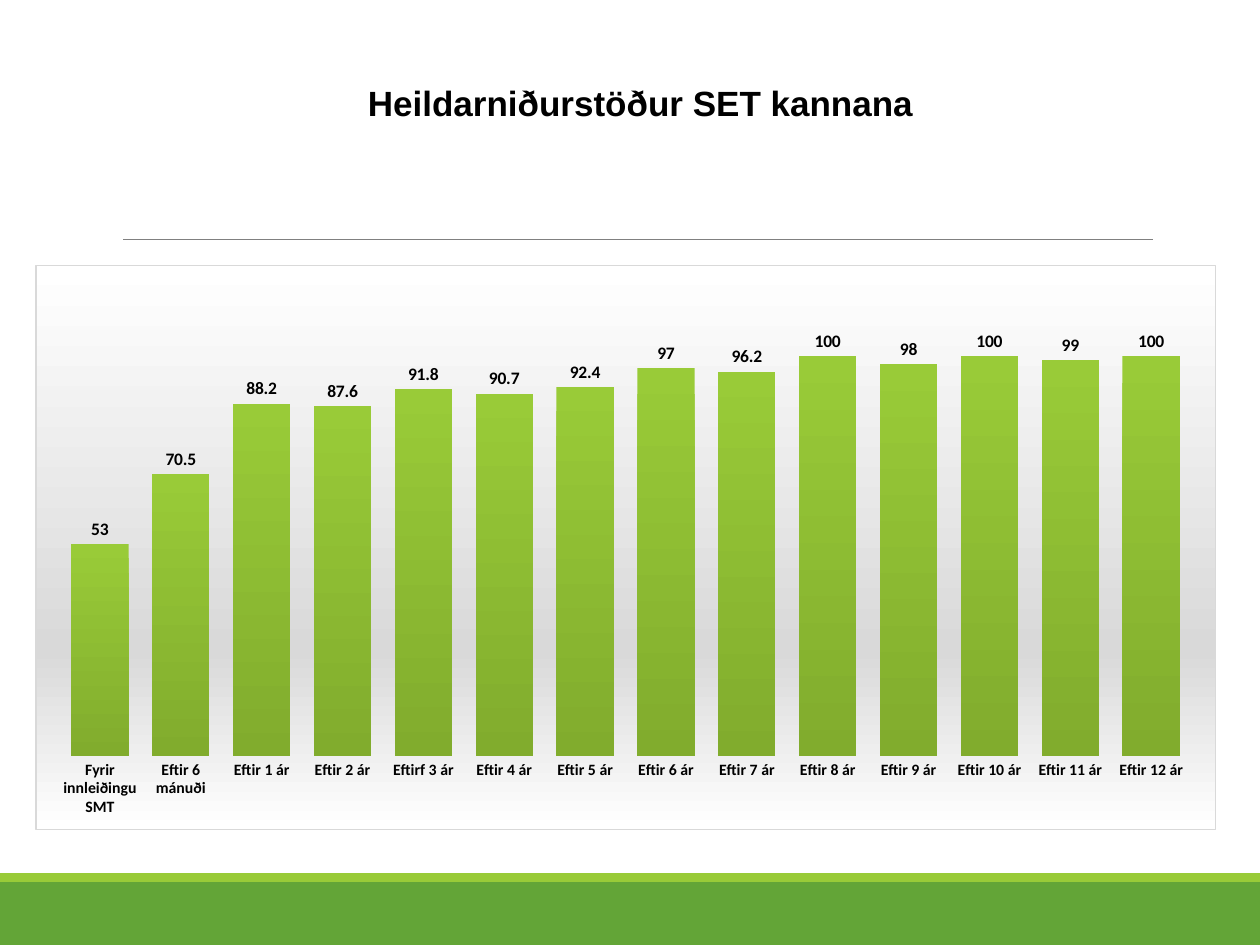
import pptx
import pptx.chart.data
import pptx.dml.color
import pptx.enum.chart
import pptx.enum.shapes
import pptx.enum.text
import pptx.oxml
import pptx.oxml.ns
import pptx.util

RGBColor = pptx.dml.color.RGBColor
BLACK = RGBColor(0x00, 0x00, 0x00)
WHITE = RGBColor(0xFF, 0xFF, 0xFF)
GRAY = RGBColor(0x80, 0x80, 0x80)
SILVER = RGBColor(0xD9, 0xD9, 0xD9)
GREEN = RGBColor(0x63, 0xA5, 0x37)
LIME = RGBColor(0x99, 0xCB, 0x38)
OLIVE = RGBColor(0x81, 0xAC, 0x2D)

WIDTH, HEIGHT = 10, 7.5
FOOTER_TOP = 7
STRIPE_HEIGHT = 0.07
NAMESPACES = pptx.oxml.ns.nsdecls("a", "c")

CATEGORIES = ["Fyrir innleiðingu SMT", "Eftir 6 mánuði", "Eftir 1 ár", "Eftir 2 ár", "Eftirf 3 ár"]
CATEGORIES += [f"Eftir {year} ár" for year in range(4, 13)]
SCORES = [53, 70.5, 88.2, 87.6, 91.8, 90.7, 92.4, 97, 96.2, 100, 98, 100, 99, 100]


def inches(*lengths):
    return [pptx.util.Inches(length) for length in lengths]


def add_band(page, top, height, color):
    band = page.shapes.add_shape(
        pptx.enum.shapes.MSO_SHAPE.RECTANGLE, *inches(0, top, WIDTH, height))
    band.shadow.inherit = False
    band.fill.solid()
    band.fill.fore_color.rgb = color
    band.line.fill.background()


def add_rule(page, left, right, top):
    rule = page.shapes.add_connector(
        pptx.enum.shapes.MSO_CONNECTOR.STRAIGHT, *inches(left, top, right, top))
    rule.line.color.rgb = GRAY
    rule.line.width = pptx.util.Pt(0.5)
    rule._element.spPr.append(pptx.oxml.parse_xml(f"<a:effectLst {NAMESPACES}/>"))


def style_font(font, name, size, bold=True):
    font.name = name
    font.size = pptx.util.Pt(size)
    font.bold = bold
    font.color.rgb = BLACK


def add_title(page, wording):
    box = page.shapes.add_textbox(*inches(0.91, 0.6, 8.35, 0.44))
    box.text_frame.word_wrap = True
    para = box.text_frame.paragraphs[0]
    para.alignment = pptx.enum.text.PP_ALIGN.CENTER
    span = para.add_run()
    span.text = wording
    style_font(span.font, "Arial", 20)


def vertical_gradient(*stops):
    marks = "".join(
        f'<a:gs pos="{share * 1000}"><a:srgbClr val="{color}"/></a:gs>' for share, color in stops)
    return (f'<a:gradFill {NAMESPACES} rotWithShape="1"><a:gsLst>{marks}</a:gsLst>'
            '<a:lin ang="5400000" scaled="0"/></a:gradFill>')


def fill_chart_area(chart):
    gradient = vertical_gradient((0, WHITE), (68, SILVER), (100, WHITE))
    border = f'<a:ln w="9525"><a:solidFill><a:srgbClr val="{SILVER}"/></a:solidFill></a:ln>'
    area = pptx.oxml.parse_xml(f"<c:spPr {NAMESPACES}>{gradient}{border}</c:spPr>")
    chart._chartSpace.chart.addnext(area)


def place_plot(chart, **shares):
    plot_area = chart._chartSpace.chart.plotArea
    for layout in plot_area.findall(pptx.oxml.ns.qn("c:layout")):
        plot_area.remove(layout)
    values = "".join(f'<c:{key} val="{share}"/>' for key, share in shares.items())
    plot_area.insert(0, pptx.oxml.parse_xml(
        f'<c:layout {NAMESPACES}><c:manualLayout><c:layoutTarget val="inner"/>'
        f'<c:xMode val="edge"/><c:yMode val="edge"/>{values}</c:manualLayout></c:layout>'))


def style_axes(chart):
    axis = chart.category_axis
    axis.major_tick_mark = pptx.enum.chart.XL_TICK_MARK.NONE
    axis.format.line.fill.background()
    style_font(axis.tick_labels.font, "Calibri", 9)
    scale = chart.value_axis
    scale.minimum_scale = 0
    scale.maximum_scale = 120
    scale.has_major_gridlines = False
    scale.visible = False


def style_columns(plot):
    plot.gap_width = 41
    plot.vary_by_categories = False
    columns = plot.series[0]
    columns.invert_if_negative = False
    columns._element.get_or_add_spPr().append(
        pptx.oxml.parse_xml(vertical_gradient((0, LIME), (100, OLIVE))))
    labels = columns.data_labels
    labels.show_value = True
    labels.position = pptx.enum.chart.XL_LABEL_POSITION.OUTSIDE_END
    style_font(labels.font, "Calibri", 10)


def add_score_chart(page):
    scores = pptx.chart.data.CategoryChartData()
    scores.categories = CATEGORIES
    scores.add_series("Series 1", SCORES)
    chart = page.shapes.add_chart(
        pptx.enum.chart.XL_CHART_TYPE.COLUMN_CLUSTERED,
        *inches(0.28, 2.1, 9.37, 4.49), scores).chart
    chart.has_title = False
    chart.has_legend = False
    style_font(chart.font, "Calibri", 10, bold=False)
    style_axes(chart)
    style_columns(chart.plots[0])
    place_plot(chart, x=0.02, y=0.02, w=0.96, h=0.85)
    fill_chart_area(chart)


def main():
    deck = pptx.Presentation()
    deck.slide_width, deck.slide_height = inches(WIDTH, HEIGHT)
    page = deck.slides.add_slide(deck.slide_layouts[6])
    add_band(page, FOOTER_TOP, HEIGHT - FOOTER_TOP, GREEN)
    add_band(page, FOOTER_TOP - STRIPE_HEIGHT, STRIPE_HEIGHT, LIME)
    add_rule(page, 0.98, 9.15, 1.9)
    add_title(page, "Heildarniðurstöður SET kannana")
    add_score_chart(page)
    deck.save("out.pptx")


if __name__ == "__main__":
    main()
